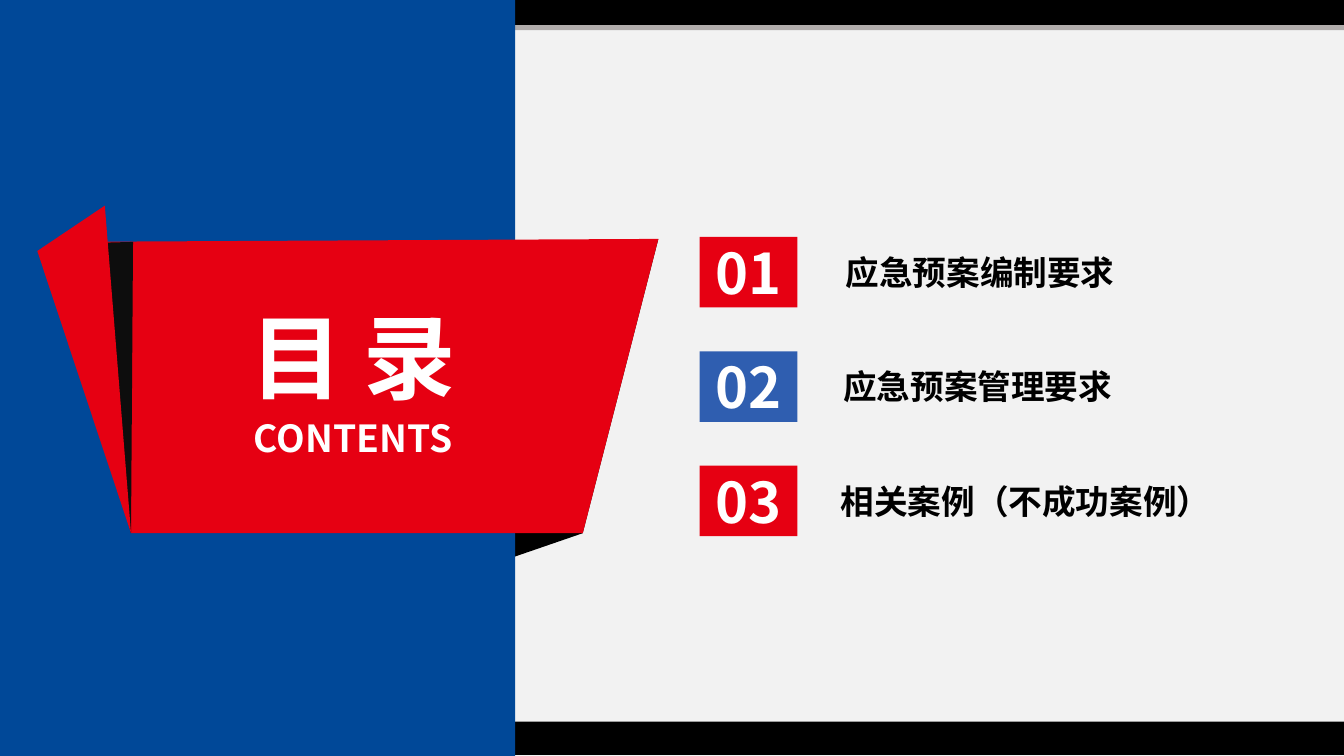
from dataclasses import dataclass

from lxml.etree import SubElement
from pptx import Presentation
from pptx.dml.color import RGBColor
from pptx.enum.shapes import MSO_SHAPE as Preset
from pptx.enum.text import MSO_ANCHOR as Anchor, PP_ALIGN as Align
from pptx.oxml.ns import qn
from pptx.util import Inches, Pt

COLUMNS, ROWS = 13.33, 7.5
WIDTH, HEIGHT = Inches(COLUMNS), Inches(ROWS)


@dataclass(frozen=True)
class Theme:
    """Colours, font and type sizes of the slide."""
    paper: str = "F2F2F2"
    black: str = "000000"
    grey: str = "B1ACAB"
    navy: str = "004898"
    blue: str = "2F5EB0"
    red: str = "E60012"
    fold: str = "0D0D0D"
    white: str = "FFFFFF"
    font: str = "Noto Sans CJK SC"
    title: float = 66
    subtitle: float = 26.6
    number: float = 40
    entry: float = 24


THEME = Theme()


def across(columns):
    """Turn grid columns into a length."""
    return round(WIDTH * columns / COLUMNS)


def down(rows):
    """Turn grid rows into a length."""
    return round(HEIGHT * rows / ROWS)


def place(left, top, width, height):
    """Turn a grid cell range into a position and size."""
    return across(left), down(top), across(width), down(height)


def paint(shape, color):
    """Fill a shape flat, without line or shadow."""
    shape.shadow.inherit = False
    shape.fill.solid()
    shape.fill.fore_color.rgb = RGBColor.from_string(color)
    shape.line.fill.background()
    return shape


def add_block(slide, area, color):
    """Add a plain rectangle."""
    return paint(slide.shapes.add_shape(Preset.RECTANGLE, *place(*area)), color)


def add_polygon(slide, corners, color):
    """Add a closed outline through grid points."""
    start, *others = [(across(x), down(y)) for x, y in corners]
    outline = slide.shapes.build_freeform(*start)
    outline.add_line_segments(others, close=True)
    return paint(outline.convert_to_shape(), color)


def write(frame, text, *, size, color, align=Align.LEFT, anchor=Anchor.TOP,
          wrap=True, inset=0):
    """Write one bold line into a text frame."""
    frame.word_wrap = wrap
    frame.vertical_anchor = anchor
    frame.margin_left = frame.margin_right = Inches(inset)
    frame.margin_top = frame.margin_bottom = Inches(inset / 2)
    paragraph = frame.paragraphs[0]
    paragraph.alignment = align
    run = paragraph.add_run()
    run.text = text
    run.font.size = Pt(size)
    run.font.bold = True
    run.font.color.rgb = RGBColor.from_string(color)
    run.font.name = THEME.font
    SubElement(run._r.get_or_add_rPr(), qn("a:ea"), typeface=THEME.font)


def add_label(slide, area, text, **style):
    """Add a text box with one line."""
    write(slide.shapes.add_textbox(*place(*area)).text_frame, text, **style)


def add_backdrop(slide):
    """Add the page colour and the bars at top and bottom."""
    slide.background.fill.solid()
    slide.background.fill.fore_color.rgb = RGBColor.from_string(THEME.paper)
    add_block(slide, (0, 0, COLUMNS, 0.25), THEME.black)
    add_block(slide, (0, 0.25, COLUMNS, 0.05), THEME.grey)
    add_block(slide, (0, 7.16, COLUMNS, 0.33), THEME.black)


def add_ribbon(slide):
    """Add the side panel and the folded ribbon around it."""
    tip, heel, hinge = (6.53, 2.37), (5.78, 5.29), (1.3, 5.29)
    add_polygon(slide, [heel, (3.69, 6.01), tip], THEME.black)
    add_block(slide, (0, 0, 5.11, ROWS), THEME.navy)
    add_polygon(slide, [heel, hinge, (0.52, 2.4), tip], THEME.red)
    add_polygon(slide, [(0.56, 2.42), (1.32, 2.4), hinge], THEME.fold)
    add_polygon(slide, [(0.37, 2.49), (1.04, 2.04), hinge], THEME.red)


def add_heading(slide):
    """Add the title and its translation on the ribbon."""
    style = dict(color=THEME.white, align=Align.CENTER, wrap=False)
    add_label(slide, (2.45, 2.98, 2.11, 1.11), "目 录", size=THEME.title, **style)
    add_label(slide, (2.47, 4.12, 2.07, 0.45), "CONTENTS",
              size=THEME.subtitle, **style)


def add_entry(slide, index, topic, color):
    """Add one numbered line of the contents."""
    drop = 1.135 * index
    badge = add_block(slide, (6.94, 2.35 + drop, 0.97, 0.7), color)
    write(badge.text_frame, f"{index + 1:02}", size=THEME.number,
          color=THEME.white, align=Align.CENTER, anchor=Anchor.MIDDLE)
    add_label(slide, (8.29 - 0.025 * index, 2.13 + drop, 4.5, 1.14), topic,
              size=THEME.entry, color=THEME.black, anchor=Anchor.MIDDLE, inset=0.1)


def main():
    """Build the contents slide."""
    deck = Presentation()
    deck.slide_width, deck.slide_height = WIDTH, HEIGHT
    slide = deck.slides.add_slide(deck.slide_layouts[6])
    add_backdrop(slide)
    add_ribbon(slide)
    add_heading(slide)
    entries = [("应急预案编制要求", THEME.red), ("应急预案管理要求", THEME.blue),
               ("相关案例（不成功案例）", THEME.red)]
    for index, (topic, color) in enumerate(entries):
        add_entry(slide, index, topic, color)
    deck.save("out.pptx")


if __name__ == "__main__":
    main()
